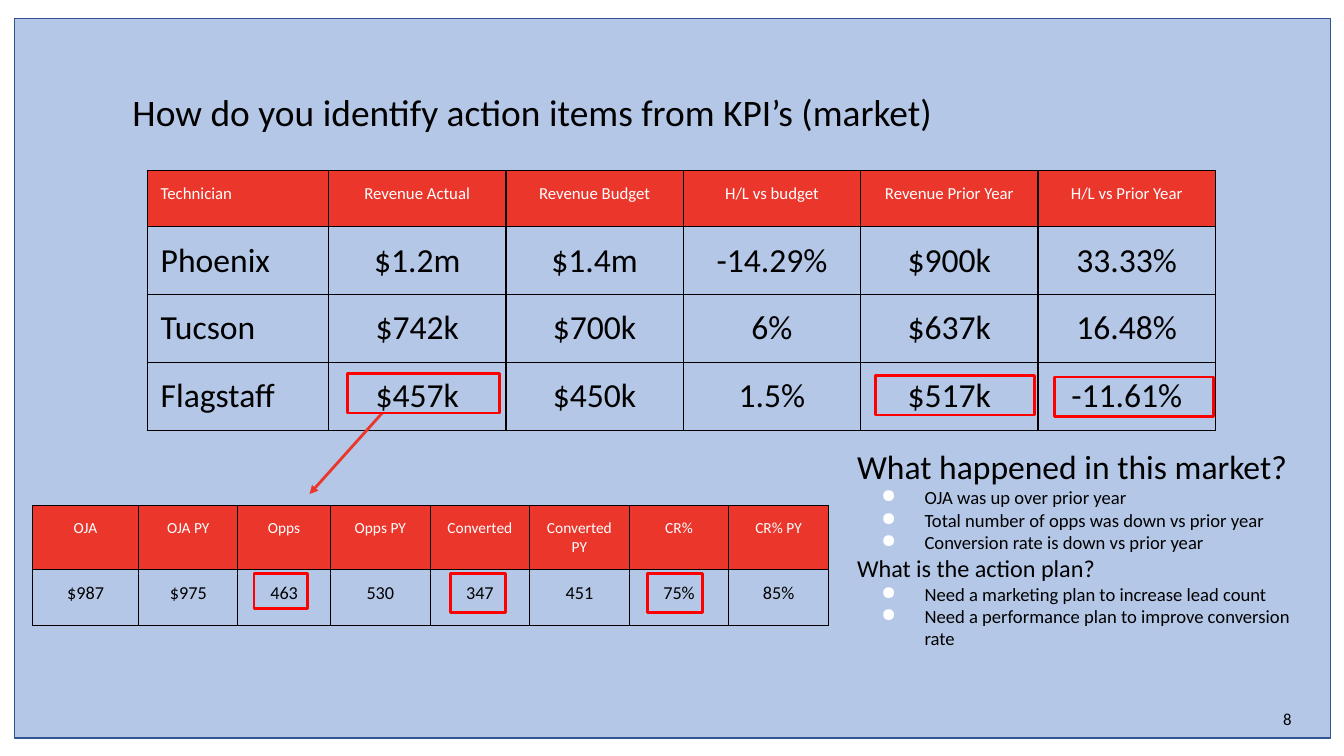
from dataclasses import dataclass

from lxml.etree import SubElement
from pptx import Presentation
from pptx.dml.color import RGBColor
from pptx.enum.shapes import MSO_CONNECTOR, MSO_SHAPE
from pptx.enum.text import MSO_ANCHOR, PP_ALIGN
from pptx.oxml.ns import qn
from pptx.util import Cm, Pt


@dataclass(frozen=True)
class Theme:
    font: str = "Calibri"
    panel: str = "B4C7E7"
    panel_line: str = "325491"
    accent: str = "EB362C"
    highlight: str = "FF0000"
    dark: str = "000000"
    light: str = "FFFFFF"
    title: float = 26.7
    large: float = 24
    question: float = 17.3
    bullet: float = 13.3
    value: float = 13
    small: float = 12
    tiny: float = 11


THEME = Theme()
INSET = Cm(0.34)

TITLE = "How do you identify action items from KPI’s (market)"
PAGE_NUMBER = "8"
MARKETS = [
    ("Technician", "Revenue Actual", "Revenue Budget", "H/L vs budget", "Revenue Prior Year", "H/L vs Prior Year"),
    ("Phoenix", "$1.2m", "$1.4m", "-14.29%", "$900k", "33.33%"),
    ("Tucson", "$742k", "$700k", "6%", "$637k", "16.48%"),
    ("Flagstaff", "$457k", "$450k", "1.5%", "$517k", "-11.61%"),
]
CONVERSION = [
    ("OJA", "OJA PY", "Opps", "Opps PY", "Converted", "Converted PY", "CR%", "CR% PY"),
    ("$987", "$975", "463", "530", "347", "451", "75%", "85%"),
]
DISCUSSION = [
    ("What happened in this market?", THEME.large, [
        "OJA was up over prior year",
        "Total number of opps was down vs prior year",
        "Conversion rate is down vs prior year",
    ]),
    ("What is the action plan?", THEME.question, [
        "Need a marketing plan to increase lead count",
        "Need a performance plan to improve conversion rate",
    ]),
]
HIGHLIGHTS = [
    (8.76, 9.42, 3.84, 0.99),
    (22.07, 9.47, 4.01, 0.99),
    (26.57, 9.5, 4.01, 0.99),
    (6.4, 14.45, 1.35, 0.89),
    (11.35, 14.45, 1.4, 0.99),
    (16.31, 14.45, 1.4, 0.99),
]


def color(code):
    return RGBColor.from_string(code)


def write(paragraph, text, size, ink=THEME.dark, align=PP_ALIGN.LEFT, spacing=None, bullet=False):
    run = paragraph.add_run()
    run.text = text
    run.font.name = THEME.font
    run.font.size = Pt(size)
    run.font.color.rgb = color(ink)
    paragraph.alignment = align
    if spacing:
        paragraph.line_spacing = spacing
    if bullet:
        properties = paragraph._p.get_or_add_pPr()
        properties.set("marL", str(Cm(1.7)))
        properties.set("indent", str(Cm(-1.09)))
        bullet_color = SubElement(properties, qn("a:buClr"))
        SubElement(bullet_color, qn("a:srgbClr"), val=THEME.light)
        SubElement(properties, qn("a:buChar"), char="●")


def set_insets(target):
    target.margin_left = target.margin_right = INSET
    target.margin_top = target.margin_bottom = INSET
    target.vertical_anchor = MSO_ANCHOR.TOP


def add_text_frame(slide, *box):
    frame = slide.shapes.add_textbox(*map(Cm, box)).text_frame
    frame.word_wrap = True
    set_insets(frame)
    return frame


def add_rectangle(slide, box, line, width, fill=None):
    shape = slide.shapes.add_shape(MSO_SHAPE.RECTANGLE, *map(Cm, box))
    shape.shadow.inherit = False
    if fill:
        shape.fill.solid()
        shape.fill.fore_color.rgb = color(fill)
    else:
        shape.fill.background()
    shape.line.color.rgb = color(line)
    shape.line.width = Pt(width)


def add_borders(cell):
    properties = cell._tc.get_or_add_tcPr()
    for position, side in enumerate(("a:lnL", "a:lnR", "a:lnT", "a:lnB")):
        border = SubElement(properties, qn(side), w=str(Pt(1)))
        fill = SubElement(border, qn("a:solidFill"))
        SubElement(fill, qn("a:srgbClr"), val=THEME.dark)
        properties.insert(position, border)


def add_grid(slide, rows, left, top, widths, heights, header_size, body_size, first_align):
    box = map(Cm, (left, top, sum(widths), sum(heights)))
    table = slide.shapes.add_table(len(rows), len(widths), *box).table
    table.horz_banding = False
    for column, width in zip(table.columns, widths):
        column.width = Cm(width)
    for row_index, (values, height) in enumerate(zip(rows, heights)):
        table.rows[row_index].height = Cm(height)
        header = row_index == 0
        for column_index, value in enumerate(values):
            cell = table.cell(row_index, column_index)
            set_insets(cell)
            if header:
                cell.fill.solid()
                cell.fill.fore_color.rgb = color(THEME.accent)
            else:
                cell.fill.background()
            write(cell.text_frame.paragraphs[0], value,
                  size=header_size if header else body_size,
                  ink=THEME.light if header else THEME.dark,
                  align=PP_ALIGN.CENTER if column_index else first_align)
            add_borders(cell)


def add_arrow(slide, start, end):
    arrow = slide.shapes.add_connector(MSO_CONNECTOR.STRAIGHT, *map(Cm, start + end))
    arrow.line.color.rgb = color(THEME.accent)
    arrow.line.width = Pt(2)
    SubElement(arrow.line._get_or_add_ln(), qn("a:tailEnd"), type="triangle")
    SubElement(arrow._element.spPr, qn("a:effectLst"))


def add_discussion(slide):
    frame = add_text_frame(slide, 21.26, 10.9, 12.24, 6.15)
    lines = []
    for question, size, answers in DISCUSSION:
        lines.append((question, size, False))
        lines += [(answer, THEME.bullet, True) for answer in answers]
    for index, (text, size, bullet) in enumerate(lines):
        paragraph = frame.add_paragraph() if index else frame.paragraphs[0]
        write(paragraph, text, size, bullet=bullet)


def main():
    presentation = Presentation()
    presentation.slide_width = Cm(33.87)
    presentation.slide_height = Cm(19.05)
    slide = presentation.slides.add_slide(presentation.slide_layouts[6])

    add_rectangle(slide, (0.36, 0.46, 33.17, 18.14), THEME.panel_line, 1, fill=THEME.panel)
    write(add_text_frame(slide, 30.86, 17.6, 2.03, 0.99).paragraphs[0],
          PAGE_NUMBER, THEME.small, align=PP_ALIGN.RIGHT)
    write(add_text_frame(slide, 3, 2.03, 24.66, 2.26).paragraphs[0],
          TITLE, THEME.title, spacing=0.9)
    add_grid(slide, MARKETS, 3.71, 4.29, [4.57] + [4.47] * 5, [1.42] + [1.71] * 3,
             THEME.small, THEME.large, PP_ALIGN.LEFT)
    add_grid(slide, CONVERSION, 0.81, 12.73, [2.69, 2.49, 2.34] + [2.51] * 5, [1.6, 1.42],
             THEME.tiny, THEME.value, PP_ALIGN.CENTER)
    add_discussion(slide)
    add_arrow(slide, (9.63, 10.41), (7.8, 12.45))
    for box in HIGHLIGHTS:
        add_rectangle(slide, box, THEME.highlight, 2)
    presentation.save("out.pptx")


if __name__ == "__main__":
    main()
